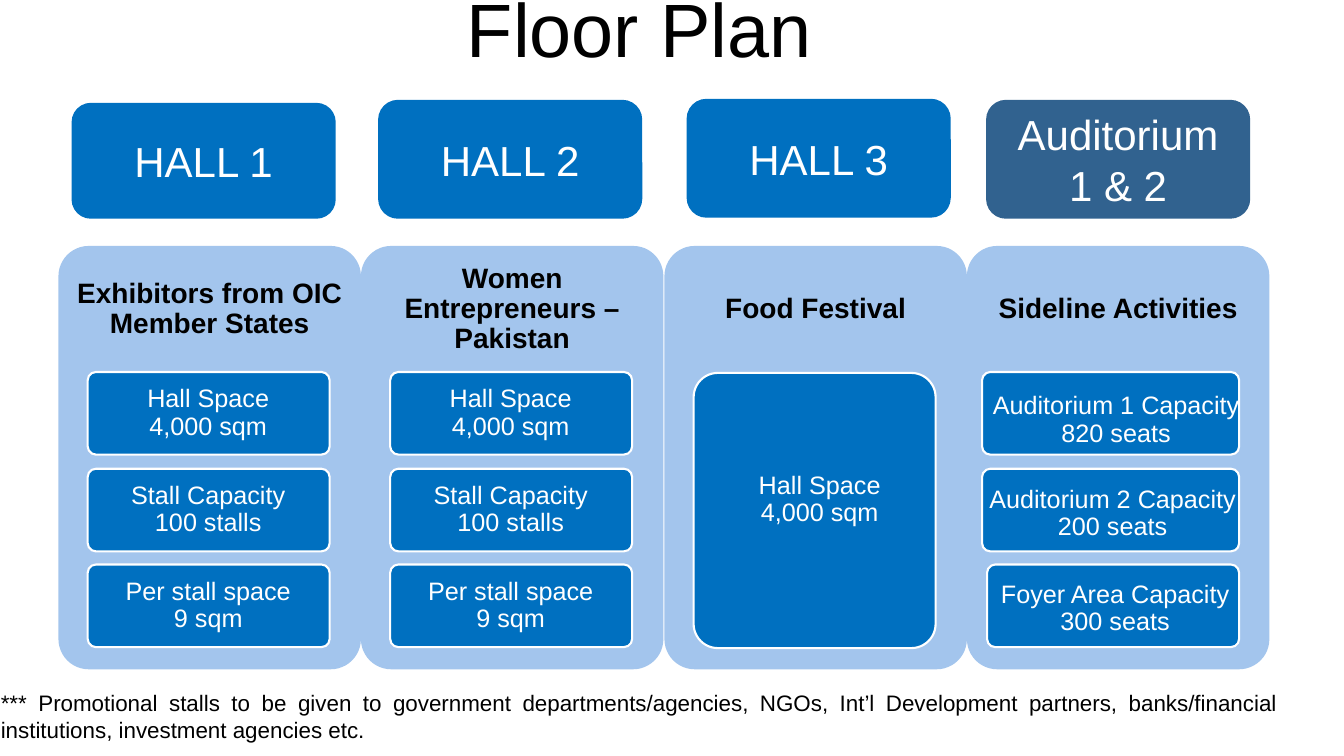
from pptx import Presentation
from pptx.dml.color import RGBColor
from pptx.enum.shapes import MSO_SHAPE as SHAPE
from pptx.enum.text import MSO_ANCHOR as ANCHOR, MSO_AUTO_SIZE as AUTO, PP_ALIGN as ALIGN
from pptx.util import Emu, Pt

PX = 9144
COLORS = {"black": "000000", "white": "FFFFFF", "blue": "0070C0",
          "navy": "31628F", "panel": "A3C5ED"}
FORMATS = {
    "title": dict(size=54, color="black", spacing=0.9, margins=(10, 5)),
    "heading": dict(size=20, color="black", bold=True, spacing=0.9, margins=(8, 8)),
    "card": dict(size=18, color="white", spacing=0.9, margins=(6, 4)),
    "hall": dict(size=30, color="white", margins=(10, 5)),
    "note": dict(size=16, color="black", margins=(10, 5),
                 align=ALIGN.JUSTIFY, anchor=ANCHOR.TOP, auto=AUTO.SHAPE_TO_FIT_TEXT),
}
PANEL_LEFT, PANEL_TOP, PANEL_STEP = 58, 244, 300.4
CARD_LEFT, CARD_TOPS = 87, (369, 465, 560)

HALLS = [
    ("HALL 1", (71, 102, 262, 115), "blue"),
    ("HALL 2", (375, 99, 262, 118), "blue"),
    ("HALL 3", (681, 98, 262, 118), "blue"),
    ("Auditorium 1 & 2", (978, 99, 262, 118), "navy"),
]
HEADINGS = ["Exhibitors from OIC Member States", "Women Entrepreneurs – Pakistan",
            "Food Festival", "Sideline Activities"]
STALL_FACTS = ["Hall Space\n4,000 sqm", "Stall Capacity\n100 stalls", "Per stall space\n9 sqm"]
WIDE_CARDS = [
    ("Hall Space\n4,000 sqm", (688, 370, 240, 273), (700, 366, 226, 259)),
    ("Auditorium 1 Capacity\n820 seats", (974, 369, 255, 82), (957, 378, 300, 78)),
    ("Auditorium 2 Capacity\n200 seats", (974, 465, 255, 82), (958, 471, 291, 78)),
    ("Foyer Area Capacity 300 seats", (979, 560, 250, 82), (969, 565, 274, 78)),
]
NOTE = ("*** Promotional stalls to be given to government departments/agencies, NGOs, "
        "Int’l Development partners, banks/financial institutions, investment agencies etc.")


class FloorPlan:
    """Draws styled floor plan elements on one slide."""

    def __init__(self, prs):
        self.s = prs.slides.add_slide(prs.slide_layouts[6])

    def color(self, name):
        return RGBColor.from_string(COLORS[name])

    def box(self, at):
        return [Emu(n * PX) for n in at]

    def label(self, sp, text, style):
        fmt = FORMATS[style]
        tf = sp.text_frame
        side, edge = self.box(fmt["margins"])
        frame = dict(word_wrap=True, auto_size=fmt.get("auto", AUTO.NONE),
                     vertical_anchor=fmt.get("anchor", ANCHOR.MIDDLE),
                     margin_left=side, margin_right=side, margin_top=edge, margin_bottom=edge)
        for name, value in frame.items():
            setattr(tf, name, value)
        font = dict(name="Arial", size=Pt(fmt["size"]), bold=fmt.get("bold", False))
        for i, line in enumerate(text.split("\n")):
            p = tf.add_paragraph() if i else tf.paragraphs[0]
            p.alignment = fmt.get("align", ALIGN.CENTER)
            p.line_spacing = fmt.get("spacing", 1.0)
            r = p.add_run()
            r.text = line
            for name, value in font.items():
                setattr(r.font, name, value)
            r.font.color.rgb = self.color(fmt["color"])

    def text(self, at, text, style):
        self.label(self.s.shapes.add_textbox(*self.box(at)), text, style)

    def rounded(self, at, fill, radius=0.1, outlined=False):
        sp = self.s.shapes.add_shape(SHAPE.ROUNDED_RECTANGLE, *self.box(at))
        sp.shadow.inherit = False
        sp.adjustments[0] = radius
        sp.fill.solid()
        sp.fill.fore_color.rgb = self.color(fill)
        if outlined:
            sp.line.color.rgb = self.color("white")
            sp.line.width = Pt(1.5)
        else:
            sp.line.fill.background()
        return sp

    def panel(self, left, heading):
        self.rounded((left, PANEL_TOP, 300, 420), "panel")
        self.text((left, PANEL_TOP, 300, 126), heading, "heading")

    def card(self, text, at, text_at):
        self.rounded(at, "blue", outlined=True)
        self.text(text_at, text, "card")

    def hall(self, text, at, fill):
        self.label(self.rounded(at, fill, 0.167), text, "hall")


def main():
    prs = Presentation()
    prs.slide_width, prs.slide_height = Emu(1333 * PX), Emu(750 * PX)
    plan = FloorPlan(prs)
    plan.text((59, -23, 1150, 111), "Floor Plan", "title")
    for i, heading in enumerate(HEADINGS):
        plan.panel(round(PANEL_LEFT + i * PANEL_STEP), heading)
    for i in range(2):
        left = round(CARD_LEFT + i * PANEL_STEP)
        for top, fact in zip(CARD_TOPS, STALL_FACTS):
            plan.card(fact, (left, top, 240, 82), (left + 2, top + 2, 235, 78))
    for card in WIDE_CARDS:
        plan.card(*card)
    for hall in HALLS:
        plan.hall(*hall)
    plan.text((-9, 679, 1286, 64), NOTE, "note")
    prs.save("out.pptx")


if __name__ == "__main__":
    main()
